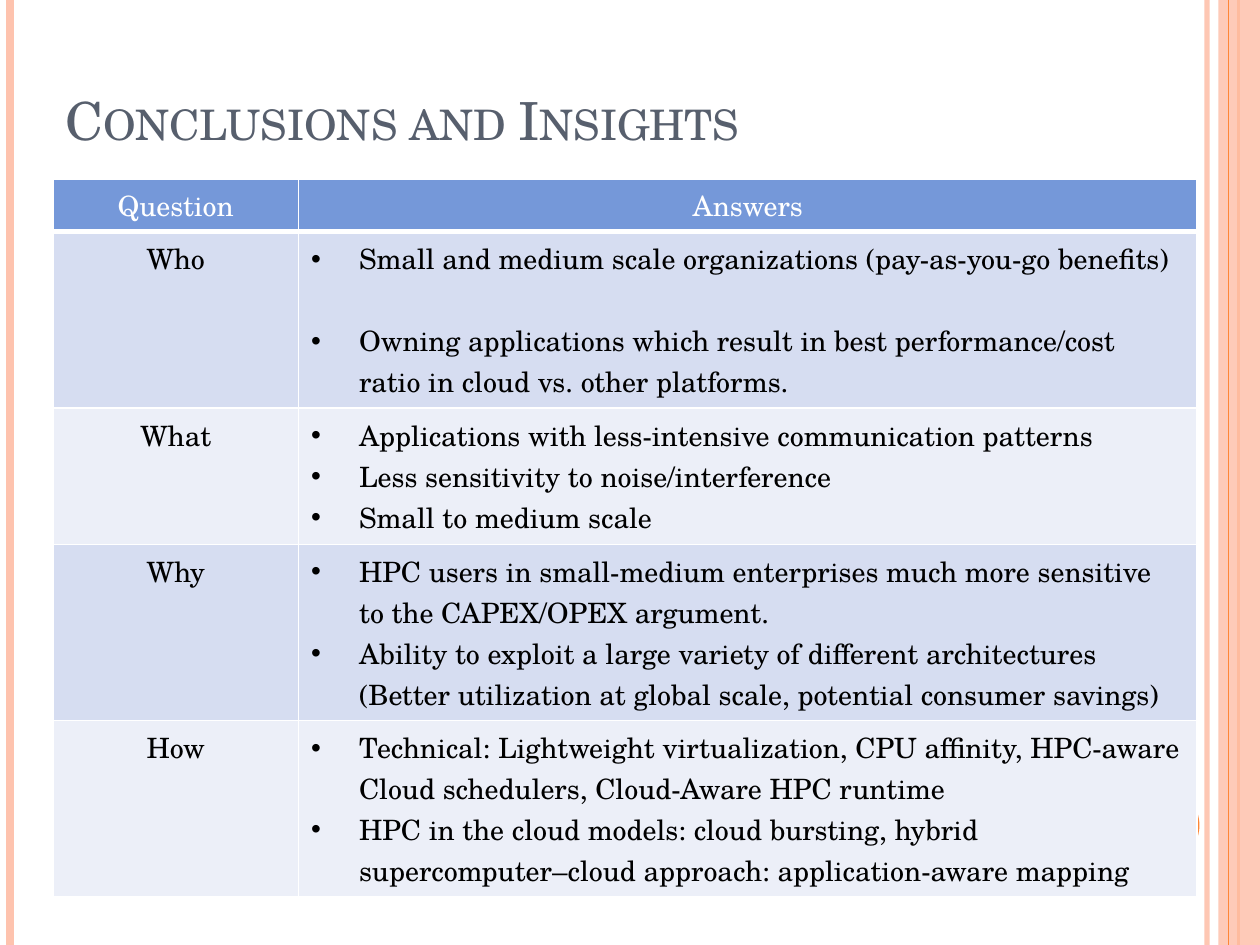
from lxml.etree import SubElement
from pptx import Presentation
from pptx.dml.color import RGBColor
from pptx.enum.shapes import MSO_CONNECTOR, MSO_SHAPE
from pptx.enum.text import MSO_ANCHOR, PP_ALIGN
from pptx.oxml.ns import qn
from pptx.util import Inches, Pt

WHITE = RGBColor(0xFF, 0xFF, 0xFF)
BLACK = RGBColor(0x00, 0x00, 0x00)
SLATE = RGBColor(0x57, 0x5F, 0x6D)
ORANGE = RGBColor(0xFE, 0x86, 0x37)
PEACH = RGBColor(0xFE, 0xC3, 0xAE)
BLUE = RGBColor(0x75, 0x98, 0xD9)
BANDS = [RGBColor(0xD6, 0xDD, 0xF1), RGBColor(0xEC, 0xEF, 0xF8)]
FONT = "TeX Gyre Schola"
INDENT = Inches(0.38)
LINE_GAP = Pt(23.4)


def add_run(p, text, size, color):
    r = p.add_run()
    r.text = text
    for name, value in {"name": FONT, "size": Pt(size)}.items():
        setattr(r.font, name, value)
    r.font.color.rgb = color
    return r


def set_alpha(sp, percent):
    """Make the shape's only colour, of its fill or its line, partly transparent."""
    color = next(sp._element.spPr.iter(qn("a:srgbClr")))
    SubElement(color, qn("a:alpha"), val=str(percent * 1000))


prs = Presentation()
prs.slide_width, prs.slide_height = Inches(10), Inches(7.5)
s = prs.slides.add_slide(prs.slide_layouts[6])

# Side stripes: a band and a disc among vertical lines, from back to front
decor = [
    ("line", 9.58, PEACH, 3, 93),
    ("line", 0.08, PEACH, 4.5, 100),
    ("line", 9.83, ORANGE, 1.5, 100),
    (MSO_SHAPE.RECTANGLE, (9.67, 0, 0.33, 7.5), PEACH, 0, 87),
    ("line", 9.75, ORANGE, 0.75, 100),
    (MSO_SHAPE.OVAL, (8.92, 6.25, 0.6, 0.6), ORANGE, 0, 100),
]
for kind, place, color, width, alpha in decor:
    if kind == "line":
        x = Inches(place)
        sp = s.shapes.add_connector(MSO_CONNECTOR.STRAIGHT, x, 0, x, prs.slide_height)
        sp.line.color.rgb = color
        sp.line.width = Pt(width)
        SubElement(sp._element.spPr, qn("a:effectLst"))
    else:
        sp = s.shapes.add_shape(kind, *map(Inches, place))
        sp.shadow.inherit = False
        sp.fill.solid()
        sp.fill.fore_color.rgb = color
        sp.line.fill.background()
    if alpha < 100:
        set_alpha(sp, alpha)

# Title
title = s.shapes.add_textbox(Inches(0.42), 0, Inches(8.17), Inches(1.25))
tf = title.text_frame
tf.word_wrap = True
tf.vertical_anchor = MSO_ANCHOR.BOTTOM
r = add_run(tf.paragraphs[0], "Conclusions and Insights", 30, SLATE)
r.font._element.set("cap", "small")

# Table of questions and answers
rows = [
    ("Question", ["Answers"], 0.42),
    ("Who", ["Small and medium scale organizations (pay-as-you-go benefits)",
             "Owning applications which result in best performance/cost ratio "
             "in cloud vs. other platforms."], 1.4),
    ("What", ["Applications with less-intensive communication patterns",
              "Less sensitivity to noise/interference",
              "Small to medium scale"], 1.08),
    ("Why", ["HPC users in small-medium enterprises much more sensitive to "
             "the CAPEX/OPEX argument.",
             "Ability to exploit a large variety of different architectures "
             "(Better utilization at global scale, potential consumer savings)"], 1.4),
    ("How", ["Technical: Lightweight virtualization, CPU affinity, HPC-aware "
             "Cloud schedulers, Cloud-Aware HPC runtime",
             "HPC in the cloud models: cloud bursting, hybrid "
             "supercomputer–cloud approach: application-aware mapping"], 1.4),
]
table = s.shapes.add_table(len(rows), 2, Inches(0.42), Inches(1.42), Inches(9.08),
                           Inches(sum(row[2] for row in rows))).table
for col, width in zip(table.columns, (1.95, 7.13)):
    col.width = Inches(width)

for i, (question, answers, height) in enumerate(rows):
    header = i == 0
    table.rows[i].height = Inches(height)
    for j, lines in enumerate(([question], answers)):
        cell = table.cell(i, j)
        tcPr = cell._tc.get_or_add_tcPr()
        for side in "LRTB":
            thick = (header and side == "B") or (i == 1 and side == "T")
            ln = SubElement(tcPr, qn(f"a:ln{side}"), w=str(Pt(3 if thick else 1)))
            SubElement(SubElement(ln, qn("a:solidFill")), qn("a:srgbClr"), val=str(WHITE))
        cell.fill.solid()
        cell.fill.fore_color.rgb = BLUE if header else BANDS[(i - 1) % 2]

        tf = cell.text_frame
        for k, text in enumerate(lines):
            p = tf.paragraphs[0] if k == 0 else tf.add_paragraph()
            add_run(p, text, 16, WHITE if header else BLACK)
            if header or j == 0:
                p.alignment = PP_ALIGN.CENTER
                continue
            if question == "Who" and k == 0:
                p.space_after = LINE_GAP
            pPr = p._p.get_or_add_pPr()
            pPr.set("marL", str(INDENT))
            pPr.set("indent", str(-INDENT))
            SubElement(pPr, qn("a:buFont"), typeface="Arial")
            SubElement(pPr, qn("a:buChar"), char="•")

prs.save("out.pptx")
